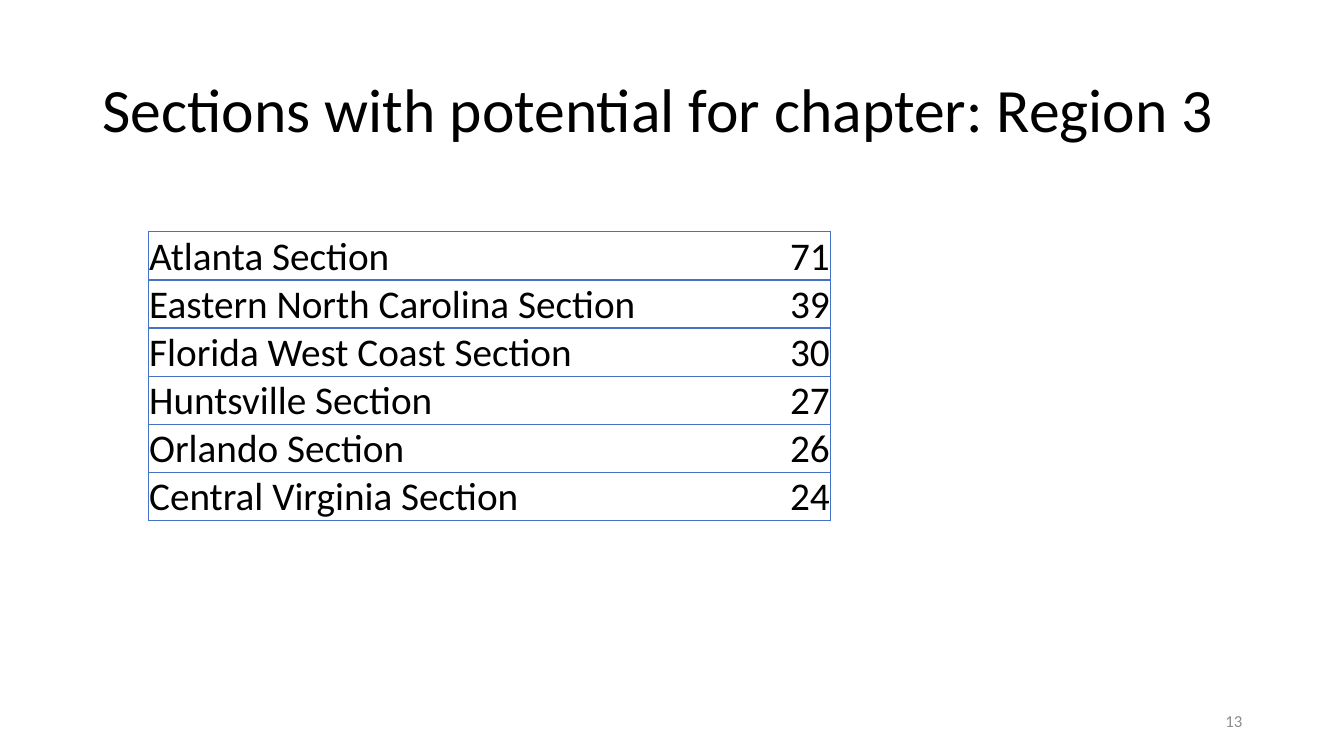
from lxml import etree
from pptx import Presentation
from pptx.dml.color import RGBColor
from pptx.enum.text import MSO_ANCHOR, PP_ALIGN
from pptx.oxml.ns import qn
from pptx.util import Inches, Pt

LEFT, RIGHT = PP_ALIGN.LEFT, PP_ALIGN.RIGHT
TOP, MIDDLE, BOTTOM = MSO_ANCHOR.TOP, MSO_ANCHOR.MIDDLE, MSO_ANCHOR.BOTTOM

THEME = {
    "font": "Calibri",
    "ink": "000000",
    "muted": "8C8C8C",
    "paper": "FFFFFF",
    "rule": "4472C4",
    "title_size": 44,
    "table_size": 28,
    "number_size": 12,
}

SECTIONS = [
    ("Atlanta Section", 71),
    ("Eastern North Carolina Section", 39),
    ("Florida West Coast Section", 30),
    ("Huntsville Section", 27),
    ("Orlando Section", 26),
    ("Central Virginia Section", 24),
]
COLUMNS = [(5.81, LEFT, ("lnL", "lnT", "lnB")), (0.96, RIGHT, ("lnR", "lnT", "lnB"))]


def write(frame, text, size, color, align):
    para = frame.paragraphs[0]
    para.text = text
    para.alignment = align
    para.font.name = THEME["font"]
    para.font.size = Pt(size)
    para.font.color.rgb = RGBColor.from_string(color)
    return para


def add_borders(cell, ruled_sides):
    properties = cell._tc.get_or_add_tcPr()
    for side in ("lnL", "lnR", "lnT", "lnB"):
        line = etree.SubElement(properties, qn(f"a:{side}"), w=str(Pt(1)))
        if side in ruled_sides:
            fill = etree.SubElement(line, qn("a:solidFill"))
            etree.SubElement(fill, qn("a:srgbClr"), val=THEME["rule"])
        else:
            etree.SubElement(line, qn("a:noFill"))


deck = Presentation()
deck.slide_width = Inches(13.33)
deck.slide_height = Inches(7.5)
page = deck.slides.add_slide(deck.slide_layouts[6])

title_box = page.shapes.add_textbox(Inches(0.92), Inches(0.74), Inches(11.5), Inches(1.1))
title_box.text_frame.word_wrap = True
title_box.text_frame.vertical_anchor = TOP
title = write(title_box.text_frame, "Sections with potential for chapter: Region 3",
              THEME["title_size"], THEME["ink"], LEFT)
title.line_spacing = 0.9

number_box = page.shapes.add_textbox(Inches(9.42), Inches(6.95), Inches(3), Inches(0.4))
number_box.text_frame.word_wrap = True
number_box.text_frame.vertical_anchor = MIDDLE
write(number_box.text_frame, "13", THEME["number_size"], THEME["muted"], RIGHT)

table = page.shapes.add_table(len(SECTIONS), len(COLUMNS), Inches(1.47), Inches(2.3),
                              Inches(6.77), Inches(2.86)).table
table.first_row = False
table.horz_banding = False

for column, (width, align, ruled_sides) in enumerate(COLUMNS):
    table.columns[column].width = Inches(width)
    for row, section in enumerate(SECTIONS):
        cell = table.cell(row, column)
        cell.margin_left = cell.margin_right = cell.margin_top = Inches(0.01)
        cell.margin_bottom = 0
        cell.vertical_anchor = BOTTOM
        write(cell.text_frame, str(section[column]), THEME["table_size"], THEME["ink"], align)
        add_borders(cell, ruled_sides)
        cell.fill.solid()
        cell.fill.fore_color.rgb = RGBColor.from_string(THEME["paper"])

deck.save("out.pptx")
